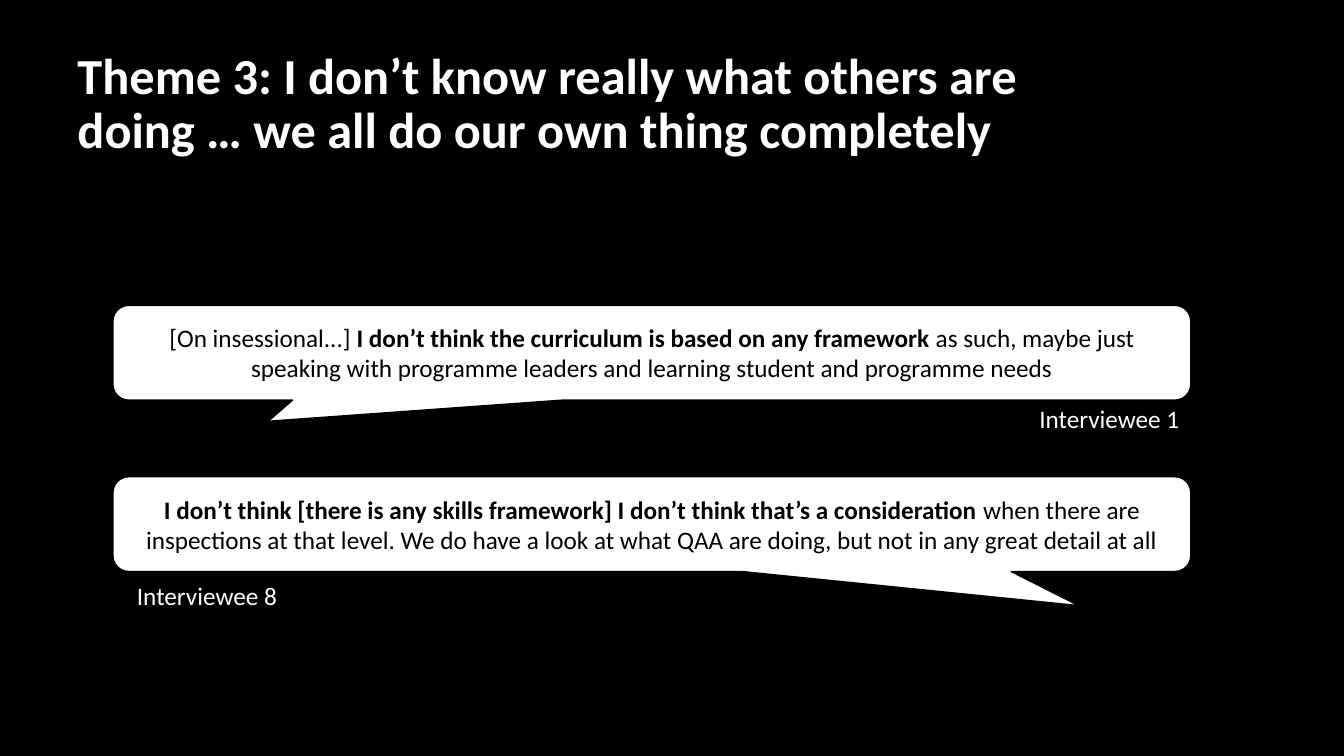
from pptx import Presentation
from pptx.dml.color import RGBColor
from pptx.enum.shapes import MSO_SHAPE
from pptx.enum.text import MSO_ANCHOR, PP_ALIGN
from pptx.util import Inches, Pt

CALLOUT = MSO_SHAPE.ROUNDED_RECTANGULAR_CALLOUT
MIDDLE, TOP = MSO_ANCHOR.MIDDLE, MSO_ANCHOR.TOP
CENTER, LEFT = PP_ALIGN.CENTER, PP_ALIGN.LEFT
FONT = "Calibri"
BLACK, WHITE = "000000", "FFFFFF"

TITLE = ("Theme 3: I don’t know really what others are doing … "
         "we all do our own thing completely")

# Runs are (text, bold); tail is the callout tip relative to the centre.
QUOTES = [
    {"runs": [("[On insessional...]", False),
              (" I don’t think the curriculum is based on any framework", True),
              (" as such, maybe just speaking with programme leaders and "
               "learning student and programme needs", False)],
     "tail": (-0.356, 0.723),
     "speaker": "Interviewee 1", "speaker_at": (10.21, 3.95)},
    {"runs": [("I don’t think [there is any skills framework] "
               "I don’t think that’s a consideration ", True),
              ("when there are inspections at that level. We do have a look at "
               "what QAA are doing, but not in any great detail at all", False)],
     "tail": (0.396, 0.86),
     "speaker": "Interviewee 8", "speaker_at": (1.26, 5.71)},
]
QUOTE_LEFT, QUOTE_TOP, QUOTE_W, QUOTE_H = 1.12, 3.03, 10.69, 0.94
QUOTE_STEP = 1.7
CORNER = 0.167


def rgb(hex_color):
    return RGBColor.from_string(hex_color)


def write(sp, runs, size, color, align=LEFT, anchor=TOP, wrap=True):
    """Fill a shape with one paragraph of (text, bold) runs."""
    tf = sp.text_frame
    tf.word_wrap = wrap
    tf.vertical_anchor = anchor
    p = tf.paragraphs[0]
    p.alignment = align
    for text, bold in runs:
        r = p.add_run()
        r.text = text
        r.font.name = FONT
        r.font.size = Pt(size)
        r.font.bold = bold
        r.font.color.rgb = rgb(color)
    return p


def add_text(slide, left, top, width, height):
    return slide.shapes.add_textbox(Inches(left), Inches(top),
                                    Inches(width), Inches(height))


def add_quote(slide, top, quote):
    sp = slide.shapes.add_shape(CALLOUT, Inches(QUOTE_LEFT), Inches(top),
                                Inches(QUOTE_W), Inches(QUOTE_H))
    for i, value in enumerate((*quote["tail"], CORNER)):
        sp.adjustments[i] = value
    sp.shadow.inherit = False
    sp.fill.solid()
    sp.fill.fore_color.rgb = rgb(WHITE)
    sp.line.color.rgb = rgb(BLACK)
    sp.line.width = Pt(1)
    write(sp, quote["runs"], 18, BLACK, CENTER, MIDDLE)


def main():
    prs = Presentation()
    prs.slide_width, prs.slide_height = Inches(13.33), Inches(7.5)
    slide = prs.slides.add_slide(prs.slide_layouts[6])
    slide.background.fill.solid()
    slide.background.fill.fore_color.rgb = rgb(BLACK)

    title = add_text(slide, 0.67, 0.32, 9.85, 1.45)
    p = write(title, [(TITLE, True)], 36, WHITE, anchor=MIDDLE)
    p.line_spacing = 0.9

    for i, quote in enumerate(QUOTES):
        add_quote(slide, QUOTE_TOP + i * QUOTE_STEP, quote)
        label = add_text(slide, *quote["speaker_at"], 1.61, 0.4)
        write(label, [(quote["speaker"], False)], 18, WHITE, wrap=False)

    prs.save("out.pptx")


if __name__ == "__main__":
    main()
